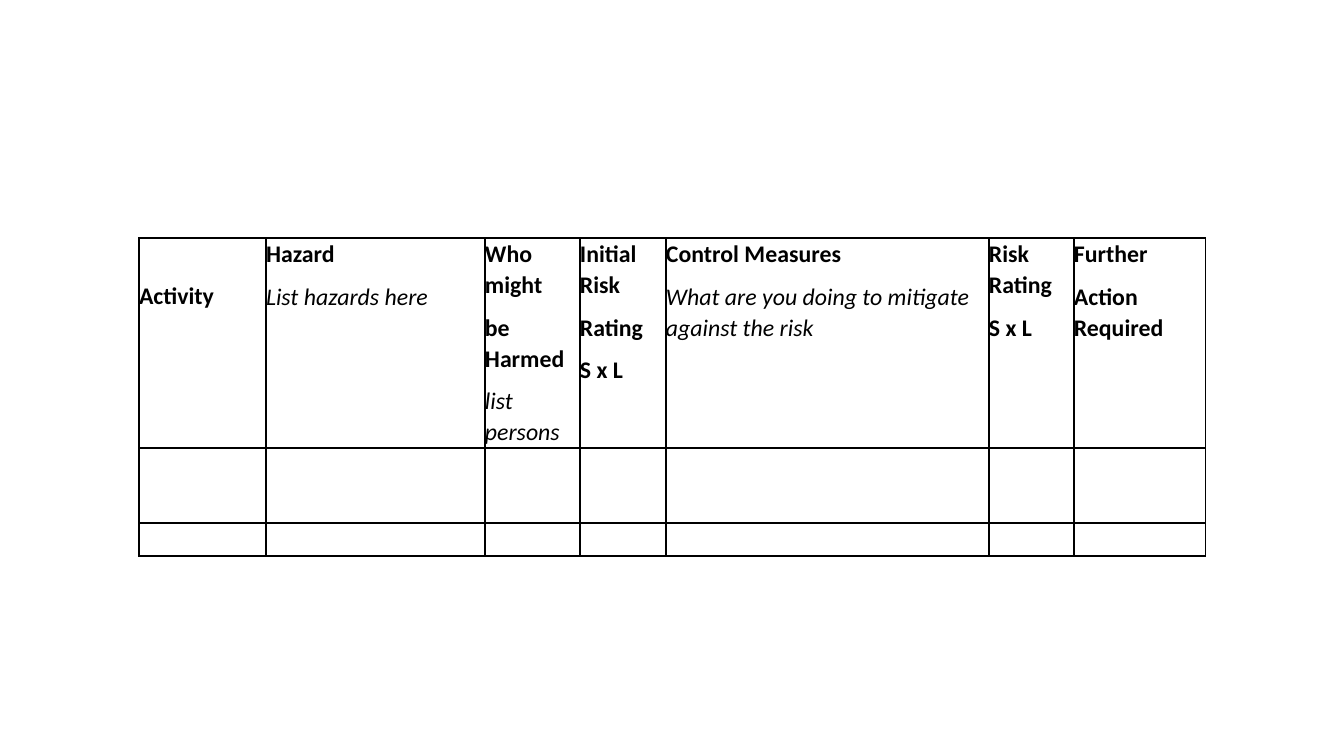
from lxml.etree import SubElement
from pptx import Presentation
from pptx.dml.color import RGBColor
from pptx.oxml.ns import qn
from pptx.util import Emu, Pt

BLACK = "000000"


def px(count):
    """Turn pixels, at 100.8 to the inch, into EMU."""
    return Emu(round(count * 914400 / 100.8))


def add_borders(cell):
    for side in ("lnL", "lnR", "lnT", "lnB"):
        line = SubElement(cell._tc.get_or_add_tcPr(), qn(f"a:{side}"), w=str(Pt(1)))
        fill = SubElement(line, qn("a:solidFill"))
        SubElement(fill, qn("a:srgbClr"), val=BLACK)


prs = Presentation()
prs.slide_width, prs.slide_height = px(1344), px(756)
slide = prs.slides.add_slide(prs.slide_layouts[6])

# Column width, bold heading paragraphs, italic hint
columns = [
    (127, ["Activity"], None),
    (219, ["Hazard"], "List hazards here"),
    (95, ["Who might", "be Harmed"], "list persons"),
    (86, ["Initial Risk", "Rating", "S x L"], None),
    (323, ["Control Measures"], "What are you doing to mitigate against the risk"),
    (85, ["Risk Rating", "S x L"], None),
    (132, ["Further", "Action Required"], None),
]
row_heights = [210, 75, 33]
activity_drop = 42

risk_table = slide.shapes.add_table(
    len(row_heights), len(columns), px(139), px(238),
    px(sum(width for width, _, _ in columns)), px(sum(row_heights))).table
risk_table.first_row = risk_table.horz_banding = False

for row, height in zip(risk_table.rows, row_heights):
    row.height = px(height)
    for cell in row.cells:
        cell.margin_left = cell.margin_right = cell.margin_top = cell.margin_bottom = 0
        add_borders(cell)
        cell.fill.background()

for index, (width, headings, hint) in enumerate(columns):
    risk_table.columns[index].width = px(width)
    heading_cell = risk_table.cell(0, index)
    lines = headings + ([hint] if hint else [])
    heading_cell.text_frame.text = "\n".join(lines)
    for paragraph, line in zip(heading_cell.text_frame.paragraphs, lines):
        paragraph.line_spacing = 1.07
        paragraph.space_after = Pt(8)
        font = paragraph.runs[0].font
        style = {"name": "Calibri", "size": Pt(17), "bold": line != hint, "italic": line == hint}
        for attribute, value in style.items():
            setattr(font, attribute, value)
        font.color.rgb = RGBColor.from_string(BLACK)

risk_table.cell(0, 0).margin_top = px(activity_drop)

prs.save("out.pptx")
